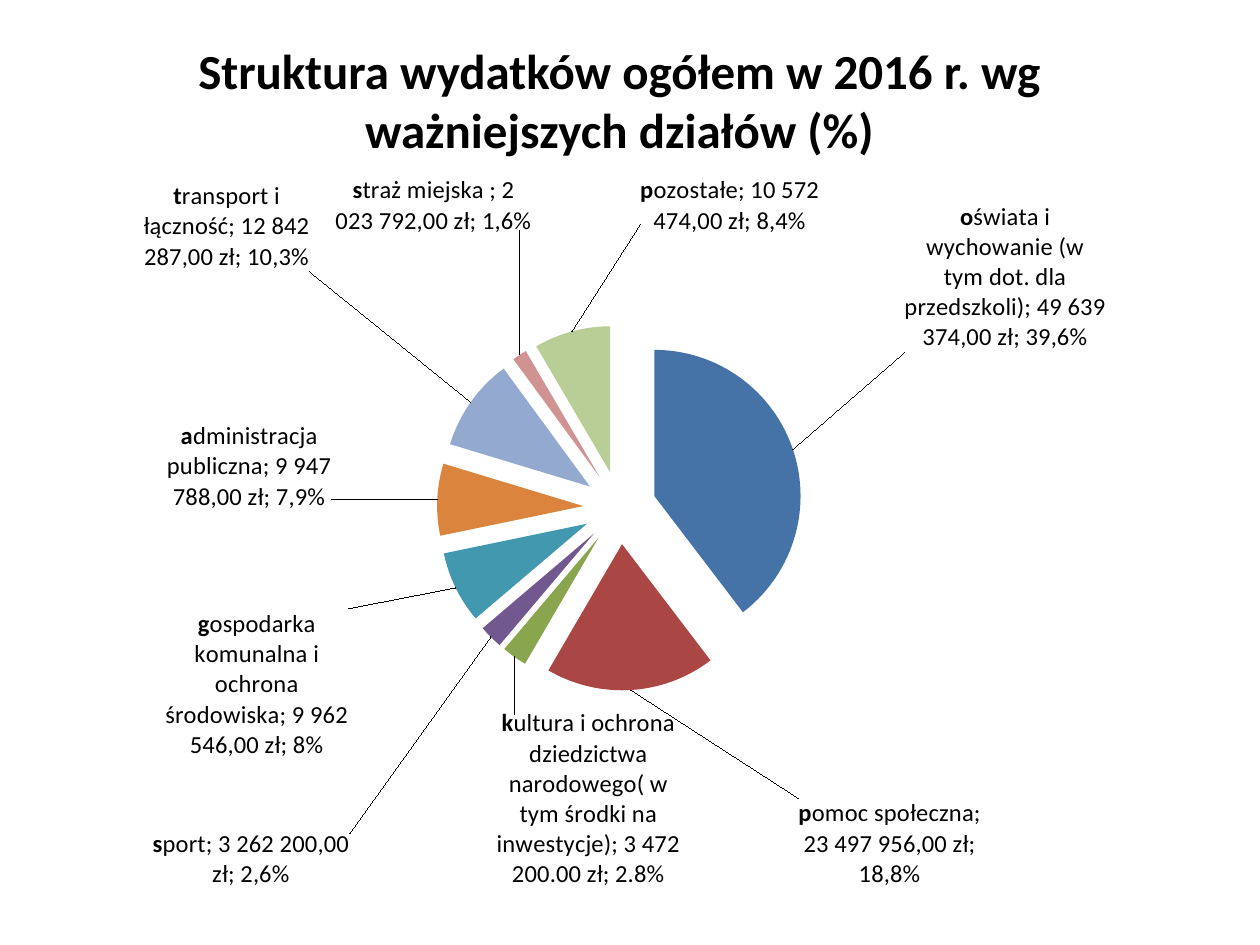
from dataclasses import dataclass

import pptx
import pptx.chart.data
import pptx.dml.color
import pptx.enum.chart
import pptx.enum.text
import pptx.oxml
import pptx.oxml.ns
import pptx.util
from pptx.util import Inches

RGBColor = pptx.dml.color.RGBColor
qn = pptx.oxml.ns.qn

BLACK = RGBColor(0x00, 0x00, 0x00)
BLUE = RGBColor(0x45, 0x72, 0xA7)
RED = RGBColor(0xAA, 0x46, 0x43)
GREEN = RGBColor(0x89, 0xA5, 0x4E)
PURPLE = RGBColor(0x71, 0x58, 0x8F)
TEAL = RGBColor(0x41, 0x98, 0xAF)
ORANGE = RGBColor(0xDB, 0x84, 0x3D)
PALE_BLUE = RGBColor(0x93, 0xA9, 0xCF)
PALE_RED = RGBColor(0xD1, 0x93, 0x92)
PALE_GREEN = RGBColor(0xB9, 0xCD, 0x96)

CHART_WIDTH, CHART_HEIGHT = 8.03, 5.67
PLOT = {"x": 2.2, "y": 1.19, "w": 3.62, "h": 2.9}  # inches within the chart
TITLE = "Struktura wydatków ogółem w 2016 r. wg ważniejszych działów (%)"


@dataclass(frozen=True)
class Expense:
    name: str
    value: int
    figures: str
    color: RGBColor
    shift_x: float  # label shift from its outside-end place, inches
    shift_y: float


EXPENSES = [
    Expense("oświata i wychowanie (w tym dot. dla przedszkoli)", 49639374,
            "49 639 374,00 zł; 39,6%", BLUE, 0.83, -0.75),
    Expense("pomoc społeczna", 23497956,
            "23 497 956,00 zł; 18,8%", RED, 2.05, 0.8),
    Expense("kultura i ochrona dziedzictwa narodowego( w tym środki na inwestycje)",
            3472200, "3 472 200.00 zł; 2.8%", GREEN, 1.35, 0.41),
    Expense("sport", 3262200, "3 262 200,00 zł; 2,6%", PURPLE, -1.08, 1.52),
    Expense("gospodarka komunalna i ochrona środowiska", 9962546,
            "9 962 546,00 zł; 8%", TEAL, -0.8, 0.14),
    Expense("administracja publiczna", 9947788,
            "9 947 788,00 zł; 7,9%", ORANGE, -0.78, -0.26),
    Expense("transport i łączność", 12842287,
            "12 842 287,00 zł; 10,3%", PALE_BLUE, -1.23, -1.0),
    Expense("straż miejska ", 2023792,
            "2 023 792,00 zł; 1,6%", PALE_RED, 0.13, -0.94),
    Expense("pozostałe", 10572474,
            "10 572 474,00 zł; 8,4%", PALE_GREEN, 1.98, -0.79),
]


def apply(target, values: dict) -> None:
    for name, value in values.items():
        setattr(target, name, value)


def style_font(font, size: float, bold: bool) -> None:
    apply(font, {"name": "Calibri", "size": pptx.util.Pt(size), "bold": bold})
    font.color.rgb = BLACK


def chart_element(tag: str, value=None):
    element = pptx.oxml.parse_xml(f"<c:{tag} {pptx.oxml.ns.nsdecls('c')}/>")
    if value is not None:
        element.set("val", str(value))
    return element


def manual_layout(settings: dict):
    layout = chart_element("layout")
    manual = chart_element("manualLayout")
    layout.append(manual)
    for tag, value in settings.items():
        manual.append(chart_element(tag, value))
    return layout


def add_title(page) -> None:
    box = page.shapes.add_textbox(Inches(0.43), Inches(0.36), Inches(8.97), Inches(1.26))
    frame = box.text_frame
    apply(frame, {
        "word_wrap": True,
        "vertical_anchor": pptx.enum.text.MSO_ANCHOR.MIDDLE,
        "margin_left": Inches(0.3), "margin_right": Inches(0.3),
        "margin_top": Inches(0.05), "margin_bottom": Inches(0.45),
    })
    para = frame.paragraphs[0]
    para.alignment = pptx.enum.text.PP_ALIGN.CENTER
    span = para.add_run()
    span.text = TITLE
    style_font(span.font, 28, True)


def style_slice(point, expense: Expense) -> None:
    point.format.fill.solid()
    point.format.fill.fore_color.rgb = expense.color
    point.format.line.fill.background()

    # Label text with a bold first letter
    label = point.data_label
    para = label.text_frame.paragraphs[0]
    text = f"{expense.name}; {expense.figures}"
    for part, bold in ((text[0], True), (text[1:], False)):
        span = para.add_run()
        span.text = part
        style_font(span.font, 14, bold)
    label.position = pptx.enum.chart.XL_LABEL_POSITION.OUTSIDE_END


def place_label(label_xml, expense: Expense) -> None:
    for old in label_xml.findall(qn("c:layout")):
        label_xml.remove(old)
    label_xml.find(qn("c:idx")).addnext(manual_layout({
        "x": expense.shift_x / CHART_WIDTH,
        "y": expense.shift_y / CHART_HEIGHT,
    }))
    for tag in ("c:showCatName", "c:showVal", "c:showPercent"):
        label_xml.find(qn(tag)).set("val", "1")


def add_expense_pie(page) -> None:
    data = pptx.chart.data.CategoryChartData()
    data.categories = [expense.name for expense in EXPENSES]
    data.add_series("Series 1", [expense.value for expense in EXPENSES])
    chart = page.shapes.add_chart(
        pptx.enum.chart.XL_CHART_TYPE.PIE, Inches(0.91), Inches(1.39),
        Inches(CHART_WIDTH), Inches(CHART_HEIGHT), data).chart
    apply(chart, {"has_title": False, "has_legend": False})
    style_font(chart.font, 10, False)
    plot = chart.plots[0]
    plot.vary_by_categories = True
    series = plot.series[0]

    # Slices pulled apart
    series_xml = series._element
    series_xml.find(qn("c:tx")).addnext(chart_element("explosion", 25))

    # Labels of the series, with leader lines
    labels = series.data_labels
    apply(labels, {
        "show_category_name": True, "show_value": True, "show_percentage": True,
        "number_format": "0.00%", "number_format_is_linked": False,
        "position": pptx.enum.chart.XL_LABEL_POSITION.OUTSIDE_END,
    })
    style_font(labels.font, 14, True)
    labels_xml = series_xml.find(qn("c:dLbls"))
    leader = labels_xml.find(qn("c:showLeaderLines"))
    if leader is None:
        leader = chart_element("showLeaderLines")
        labels_xml.append(leader)
    leader.set("val", "1")

    for index, expense in enumerate(EXPENSES):
        style_slice(series.points[index], expense)
    for label_xml, expense in zip(labels_xml.findall(qn("c:dLbl")), EXPENSES):
        place_label(label_xml, expense)

    # Position of the pie
    area = chart._chartSpace.find(f".//{qn('c:plotArea')}")
    for old in area.findall(qn("c:layout")):
        area.remove(old)
    sizes = {"x": CHART_WIDTH, "y": CHART_HEIGHT, "w": CHART_WIDTH, "h": CHART_HEIGHT}
    settings = {"layoutTarget": "inner", "xMode": "edge", "yMode": "edge"}
    settings |= {key: PLOT[key] / sizes[key] for key in PLOT}
    area.insert(0, manual_layout(settings))


def main() -> None:
    deck = pptx.Presentation()
    apply(deck, {"slide_width": Inches(10), "slide_height": Inches(7.5)})
    page = deck.slides.add_slide(deck.slide_layouts[6])
    add_title(page)
    add_expense_pie(page)
    deck.save("out.pptx")


if __name__ == "__main__":
    main()
